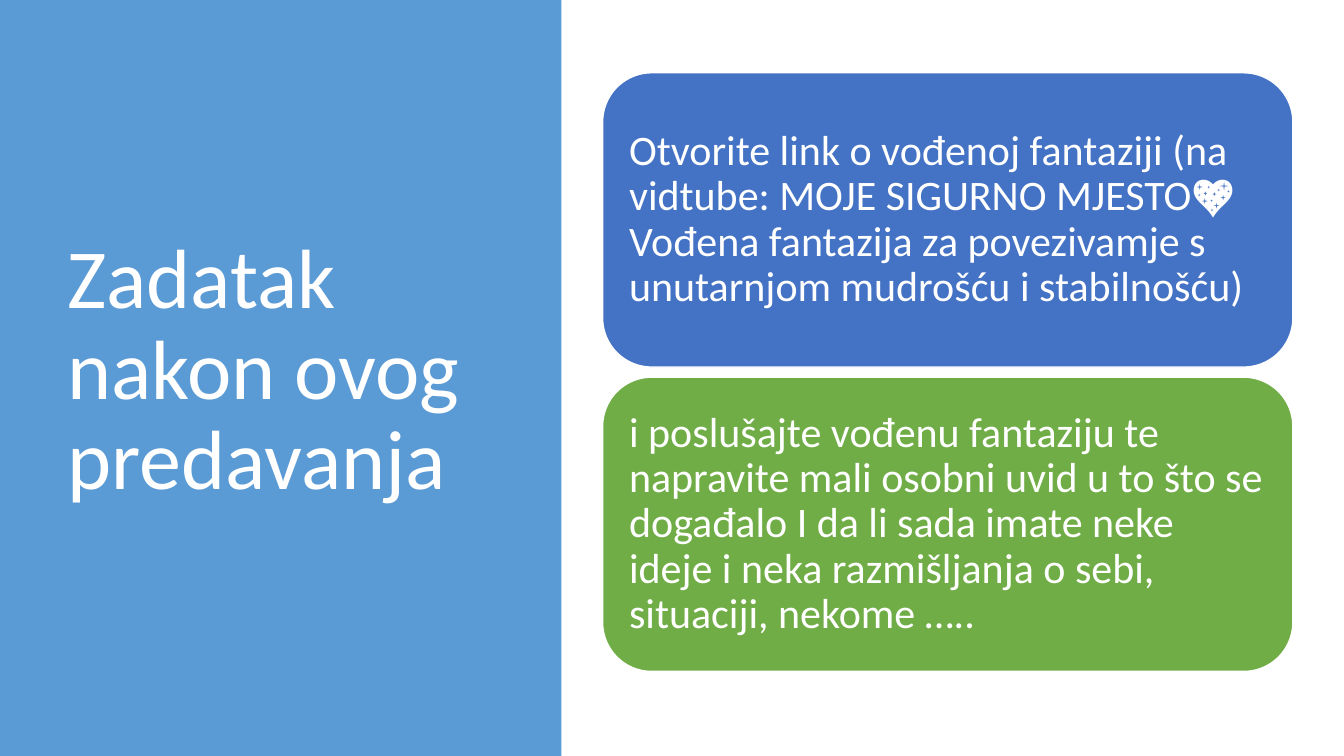
from pptx import Presentation
from pptx.dml.color import RGBColor
from pptx.enum.shapes import MSO_SHAPE
from pptx.enum.text import MSO_ANCHOR, MSO_AUTO_SIZE, PP_ALIGN
from pptx.util import Pt

RECTANGLE = MSO_SHAPE.RECTANGLE
ROUNDED = MSO_SHAPE.ROUNDED_RECTANGLE
MIDDLE = MSO_ANCHOR.MIDDLE
NO_FIT = MSO_AUTO_SIZE.NONE
LEFT = PP_ALIGN.LEFT

COLORS = {
    "panel": "5B9BD5",
    "link": "4472C4",
    "reflection": "70AD47",
    "white": "FFFFFF",
}
TITLE = "Zadatak nakon ovog predavanja"
TASKS = [
    ("link", "Otvorite link o vođenoj fantaziji (na vidtube: MOJE SIGURNO MJESTO💖"
             "Vođena fantazija za povezivamje s unutarnjom mudrošću i stabilnošću)"),
    ("reflection", "i poslušajte vođenu fantaziju te napravite mali osobni uvid u to "
                   "što se događalo I da li sada imate neke ideje i neka razmišljanja "
                   "o sebi, situaciji, nekome ….."),
]
TASK_TOP, TASK_HEIGHT, TASK_GAP = 52, 210.2, 7.2


class SlideBuilder:
    """Holds the text style and the current page, and adds its elements."""

    def __init__(self, page, font_name):
        self.page = page
        self.font_name = font_name

    def color(self, name):
        return RGBColor.from_string(COLORS[name])

    def set_text(self, shape, text, size):
        frame = shape.text_frame
        frame.word_wrap = True
        frame.auto_size = NO_FIT
        frame.vertical_anchor = MIDDLE
        frame.text = text
        paragraph = frame.paragraphs[0]
        paragraph.alignment = LEFT
        paragraph.line_spacing = 0.9
        paragraph.font.name = self.font_name
        paragraph.font.size = Pt(size)
        paragraph.font.color.rgb = self.color("white")
        return frame

    def box(self, kind, left, top, width, height, fill):
        box = self.page.shapes.add_shape(kind, Pt(left), Pt(top), Pt(width), Pt(height))
        box.shadow.inherit = False
        box.fill.solid()
        box.fill.fore_color.rgb = self.color(fill)
        box.line.fill.background()
        return box

    def title(self, text, left, top, width, height):
        title = self.page.shapes.title
        title.left, title.top = Pt(left), Pt(top)
        title.width, title.height = Pt(width), Pt(height)
        self.set_text(title, text, 60)
        self.page.shapes.element.append(title.element)

    def task(self, text, top, fill):
        box = self.box(ROUNDED, 430.5, top, 493, TASK_HEIGHT, fill)
        box.line.color.rgb = self.color("white")
        box.line.width = Pt(1)
        frame = self.set_text(box, text, 30)
        frame.margin_left = frame.margin_right = Pt(8.64)
        frame.margin_top = frame.margin_bottom = Pt(8.64)


def main():
    deck = Presentation()
    deck.slide_width, deck.slide_height = Pt(960), Pt(540)
    title_only = deck.slide_layouts[5]
    builder = SlideBuilder(deck.slides.add_slide(title_only), "Calibri")
    builder.box(RECTANGLE, 0, 0, 401, 540, "panel")
    builder.title(TITLE, 41, 49, 299.5, 433.5)
    for index, (fill, text) in enumerate(TASKS):
        builder.task(text, TASK_TOP + index * (TASK_HEIGHT + TASK_GAP), fill)
    deck.save("out.pptx")


if __name__ == "__main__":
    main()
